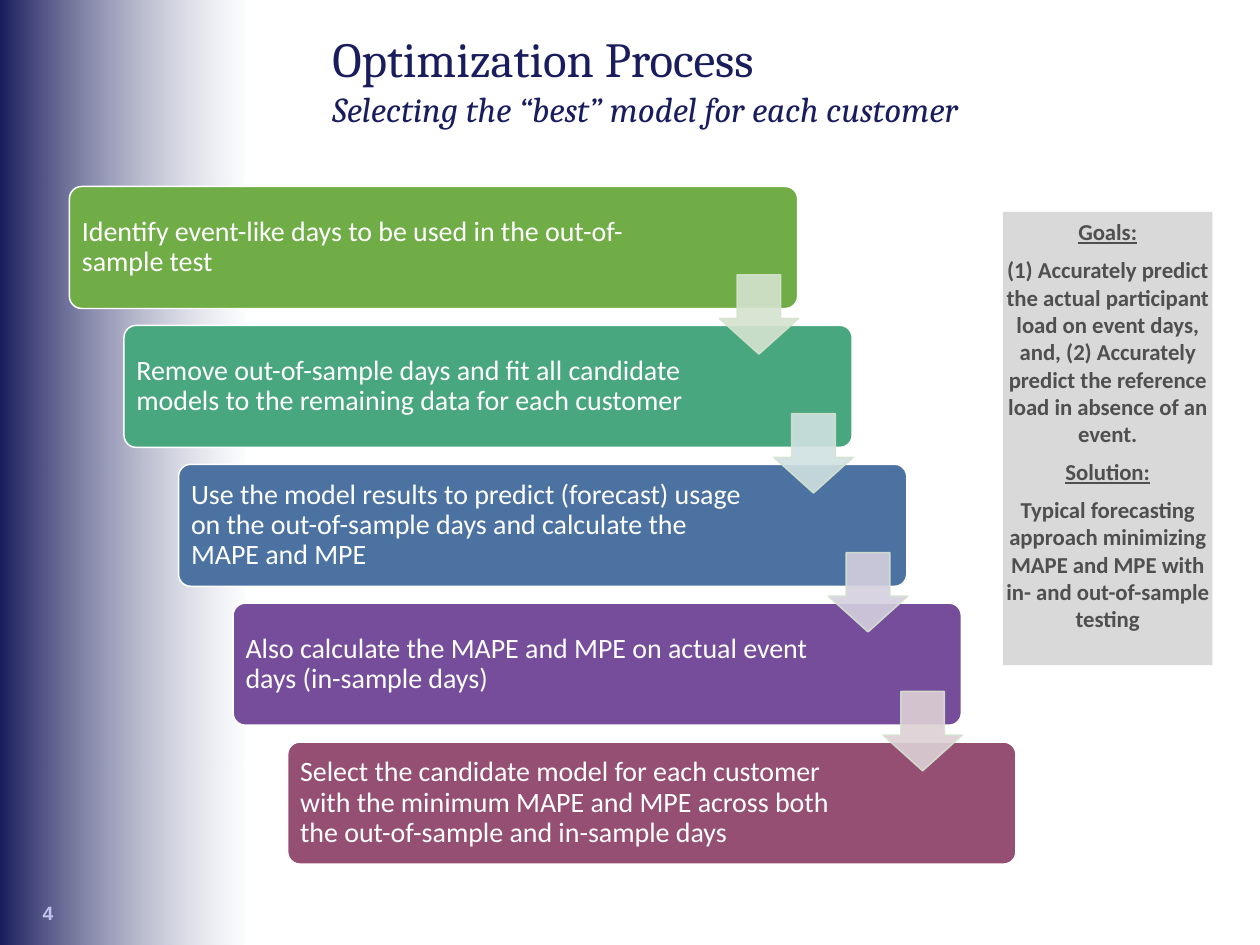
import pptx
import pptx.dml.color
import pptx.enum.shapes
import pptx.enum.text
import pptx.oxml
import pptx.oxml.ns
import pptx.util

Cm = pptx.util.Cm
Pt = pptx.util.Pt
KIND = pptx.enum.shapes.MSO_SHAPE
ALIGN = pptx.enum.text.PP_ALIGN
ANCHOR = pptx.enum.text.MSO_ANCHOR

NAVY, WHITE, PALE = "1A1D5D", "FFFFFF", "D5E3CF"

STEPS = [
    ("70AD47", "Identify event-like days to be used in the out-of-sample test"),
    ("49A77F", "Remove out-of-sample days and fit all candidate models to the "
               "remaining data for each customer"),
    ("4B72A1", "Use the model results to predict (forecast) usage on the "
               "out-of-sample days and calculate the MAPE and MPE"),
    ("764D9B", "Also calculate the MAPE and MPE on actual event days (in-sample days)"),
    ("954F72", "Select the candidate model for each customer with the minimum MAPE "
               "and MPE across both the out-of-sample and in-sample days"),
]
ARROWS = ["D5E3CF", "D0E1E1", "D4D0DF", "DDD0D5"]
GOALS = [
    ("Goals:", True),
    ("(1) Accurately predict the actual participant load on event days, and, "
     "(2) Accurately predict the reference load in absence of an event.", False),
    ("Solution:", True),
    ("Typical forecasting approach minimizing MAPE and MPE with in- and "
     "out-of-sample testing", False),
]


def color(code):
    return pptx.dml.color.RGBColor.from_string(code)


def fade(root, share):
    """Give every colour under root an opacity in percent."""
    for node in root.iter(pptx.oxml.ns.qn("a:srgbClr")):
        alpha = pptx.oxml.parse_xml(
            f'<a:alpha {pptx.oxml.ns.nsdecls("a")} val="{share * 1000}"/>')
        node.append(alpha)


class Deck:
    """Style values and the slide being drawn."""

    fonts = {
        "title": {"name": "Cambria", "size": Pt(28), "color": NAVY},
        "sub": {"name": "Cambria", "size": Pt(20), "italic": True, "color": NAVY},
        "step": {"name": "Calibri", "size": Pt(16), "color": WHITE},
        "goal": {"name": "Calibri", "size": Pt(13), "bold": True, "color": "4F4F4F"},
        "page": {"name": "Arial", "size": Pt(11), "bold": True, "color": "C2C4EE"},
    }

    def __init__(self, slide):
        self.slide = slide

    def style(self, font, key, **more):
        for name, value in {**self.fonts[key], **more}.items():
            if name == "color":
                font.color.rgb = color(value)
            else:
                setattr(font, name, value)

    def frame(self, shape, pad, anchor=ANCHOR.TOP):
        """Set wrapping, anchor and insets (left, top, right, bottom)."""
        text = shape.text_frame
        text.word_wrap = True
        text.vertical_anchor = anchor
        for side, gap in zip(("left", "top", "right", "bottom"), pad):
            setattr(text, f"margin_{side}", Cm(gap))
        return text

    def box(self, place, fill, pad, anchor=ANCHOR.TOP):
        shape = self.slide.shapes.add_textbox(*map(Cm, place))
        if fill:
            shape.fill.solid()
            shape.fill.fore_color.rgb = color(fill)
        return self.frame(shape, pad, anchor)

    def shape(self, kind, place, fill, line):
        shape = self.slide.shapes.add_shape(kind, *map(Cm, place))
        shape.shadow.inherit = False
        shape.fill.solid()
        shape.fill.fore_color.rgb = color(fill)
        shape.line.color.rgb = color(line)
        shape.line.width = Pt(0.85)
        return shape

    def band(self, place):
        """Draw the side band, dark at the left and clear at the right."""
        shape = self.shape(KIND.RECTANGLE, place, WHITE, WHITE)
        shape.line.fill.background()
        shape.fill.gradient()
        shape.fill.gradient_angle = 0
        dark, light = shape.fill.gradient_stops
        dark.color.rgb, light.color.rgb = color(NAVY), color("F7FAFD")
        dark.position, light.position = 0, 1
        fade(shape.fill.gradient_stops[1]._gs, 46)

    def title(self, place, head, sub):
        para = self.box(place, WHITE, (0, 0, 0, 0)).paragraphs[0]
        for key, words in (("title", head), ("sub", sub)):
            if key == "sub":
                para.add_line_break()
            run = para.add_run()
            run.text = words
            self.style(run.font, key)

    def page(self, place, label):
        para = self.box(place, None, (0, 0, 0, 0), ANCHOR.MIDDLE).paragraphs[0]
        para.text = label
        para.alignment = ALIGN.CENTER
        self.style(para.font, "page")

    def goals(self, place, rows):
        text = self.box(place, "D9D9D9", (0, 0.13, 0, 0.13))
        for i, (words, under) in enumerate(rows):
            para = text.add_paragraph() if i else text.paragraphs[0]
            para.text = words
            para.alignment = ALIGN.CENTER
            para.space_after = Pt(6)
            self.style(para.font, "goal", underline=under)

    def step(self, place, fill, words):
        shape = self.shape(KIND.ROUNDED_RECTANGLE, place, fill, WHITE)
        shape.adjustments[0] = 0.1
        para = self.frame(shape, (0.18, 0.18, 2.87, 0.18), ANCHOR.MIDDLE).paragraphs[0]
        para.text = words
        para.alignment = ALIGN.LEFT
        para.line_spacing = 0.9
        self.style(para.font, "step")

    def arrow(self, place, fill):
        shape = self.shape(KIND.DOWN_ARROW, place, fill, PALE)
        shape.adjustments[0] = 0.45
        shape.adjustments[1] = 0.45
        shape.adjustments[0] = 0.55
        fade(shape._element.spPr, 90)


def main():
    show = pptx.Presentation()
    show.slide_width, show.slide_height = Cm(25.4), Cm(19.05)
    deck = Deck(show.slides.add_slide(show.slide_layouts[6]))

    deck.band((0, 0, 4.93, 19.05))
    deck.page((0.69, 18.08, 0.56, 0.66), "4")
    deck.title((6.7, 0.58, 18.7, 2.41), "Optimization Process",
               "Selecting the “best” model for each customer")
    deck.goals((20.22, 4.27, 4.22, 9.14), GOALS)

    right, down = 1.1, 2.8
    for i, (fill, words) in enumerate(STEPS):
        deck.step((1.4 + i * right, 3.76 + i * down, 14.68, 2.46), fill, words)
    for i, fill in enumerate(ARROWS):
        deck.arrow((14.5 + i * right, 5.54 + i * down, 1.6, 1.6), fill)

    show.save("out.pptx")


if __name__ == "__main__":
    main()
